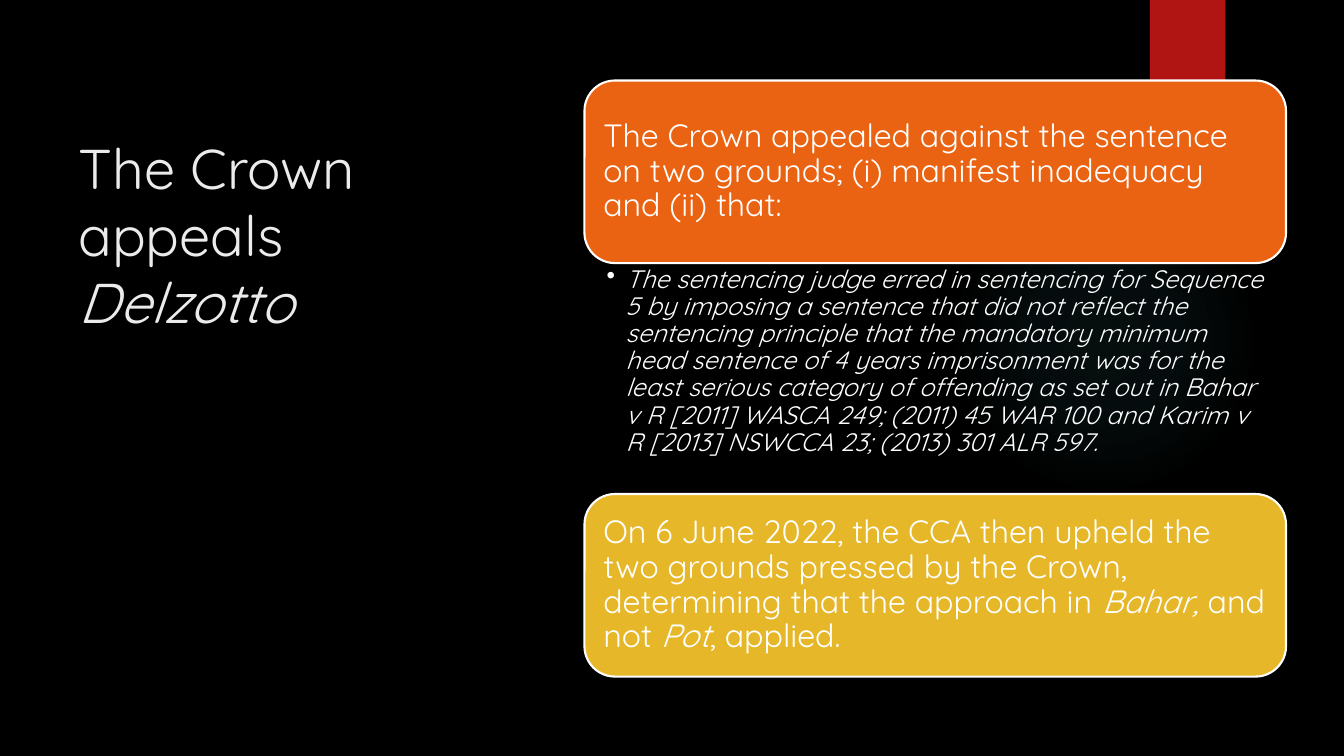
from lxml.etree import SubElement
from pptx import Presentation
from pptx.dml.color import RGBColor
from pptx.enum.shapes import MSO_SHAPE
from pptx.enum.text import MSO_ANCHOR, PP_ALIGN
from pptx.oxml import parse_xml
from pptx.oxml.ns import nsdecls, qn
from pptx.util import Cm, Pt

BLACK = RGBColor(0x00, 0x00, 0x00)
WHITE = RGBColor(0xFF, 0xFF, 0xFF)
PALE_GREY = RGBColor(0xEB, 0xEB, 0xEB)
RED = RGBColor(0xB0, 0x15, 0x13)
ORANGE = RGBColor(0xEA, 0x63, 0x12)
GOLD = RGBColor(0xE6, 0xB7, 0x29)
TEAL = RGBColor(0x50, 0xB9, 0xC1)
FONT = "Quicksand"

TITLE = [("The Crown appeals ", False), ("Delzotto", True)]
GROUNDS = [("The Crown appealed against the sentence on two grounds; "
            "(i) manifest inadequacy and (ii) that:", False)]
ERROR = [("The sentencing judge erred in sentencing for Sequence 5 by imposing a "
          "sentence that did not reflect the sentencing principle that the mandatory "
          "minimum head sentence of 4 years imprisonment was for the least serious "
          "category of offending as set out in Bahar v R [2011] WASCA 249; (2011) 45 "
          "WAR 100 and Karim v R [2013] NSWCCA 23; (2013) 301 ALR 597.", True)]
OUTCOME = [("On 6 June 2022, the CCA then upheld the two grounds pressed by the Crown, "
            "determining that the approach in ", False), ("Bahar, ", True),
           ("and not ", False), ("Pot", True), (", applied.", False)]


def write_text(shape, runs, size, color=WHITE, anchor=MSO_ANCHOR.TOP,
               margins=(0.25, 0.25, 0.25, 0.25), line_spacing=0.9, bullet_indent=None):
    frame = shape.text_frame
    frame.word_wrap = True
    frame.vertical_anchor = anchor
    (frame.margin_left, frame.margin_top,
     frame.margin_right, frame.margin_bottom) = map(Cm, margins)
    paragraph = frame.paragraphs[0]
    if bullet_indent:
        properties = paragraph._p.get_or_add_pPr()
        properties.set("marL", str(Cm(bullet_indent)))
        properties.set("indent", str(-Cm(bullet_indent)))
        SubElement(properties, qn("a:buChar")).set("char", "•")
    paragraph.alignment = PP_ALIGN.LEFT
    paragraph.line_spacing = line_spacing
    for text, italic in runs:
        run = paragraph.add_run()
        run.text = text
        run.font.name = FONT
        run.font.size = Pt(size)
        run.font.italic = italic
        run.font.color.rgb = color


def add_plain_shape(slide, kind, left, top, width, height, fill=None):
    shape = slide.shapes.add_shape(kind, Cm(left), Cm(top), Cm(width), Cm(height))
    shape.shadow.inherit = False
    shape.line.fill.background()
    if fill is not None:
        shape.fill.solid()
        shape.fill.fore_color.rgb = fill
    return shape


def add_backdrop(slide):
    slide.background.fill.solid()
    slide.background.fill.fore_color.rgb = BLACK
    glow = add_plain_shape(slide, MSO_SHAPE.OVAL, 23.9, 4.65, 7.82, 7.82)
    stops = "".join(
        f'<a:gs pos="{position * 1000}"><a:srgbClr val="{TEAL}">'
        f'<a:alpha val="{alpha * 1000}"/></a:srgbClr></a:gs>'
        for position, alpha in ((0, 7), (36, 6), (69, 0)))
    gradient = parse_xml(
        f'<a:gradFill {nsdecls("a")}><a:gsLst>{stops}</a:gsLst><a:path path="circle">'
        '<a:fillToRect l="50000" t="50000" r="50000" b="50000"/></a:path></a:gradFill>')
    glow._element.spPr.find(qn("a:prstGeom")).addnext(gradient)
    add_plain_shape(slide, MSO_SHAPE.RECTANGLE, 28.98, 0, 1.9, 3.17, RED)


def add_title(slide, left, top, width, height):
    box = slide.shapes.add_textbox(Cm(left), Cm(top), Cm(width), Cm(height))
    write_text(box, TITLE, 40, color=PALE_GREY, margins=(0.25, 0.13, 0.25, 0.13),
               line_spacing=1.0)


def add_card(slide, runs, fill, left, top, width, height):
    card = add_plain_shape(slide, MSO_SHAPE.ROUNDED_RECTANGLE,
                           left, top, width, height, fill)
    card.line.color.rgb = WHITE
    card.line.width = Pt(1.5)
    write_text(card, runs, 23, anchor=MSO_ANCHOR.MIDDLE)


def add_appeal_list(slide, left, top, width, height):
    card_height = 4.6
    detail_height = height - 2 * card_height
    detail_top = top + card_height
    add_card(slide, GROUNDS, ORANGE, left, top, width, card_height)
    detail = slide.shapes.add_textbox(Cm(left), Cm(detail_top), Cm(width),
                                      Cm(detail_height))
    write_text(detail, ERROR, 18, margins=(0.56, 0.08, 0.46, 0.08), bullet_indent=0.48)
    add_card(slide, OUTCOME, GOLD, left, detail_top + detail_height, width, card_height)


def main():
    presentation = Presentation()
    presentation.slide_width = Cm(33.87)
    presentation.slide_height = Cm(19.05)
    slide = presentation.slides.add_slide(presentation.slide_layouts[6])
    add_backdrop(slide)
    add_title(slide, 1.73, 3.23, 10, 12.57)
    add_appeal_list(slide, 14.73, 2.03, 17.68, 15.02)
    presentation.save("out.pptx")


if __name__ == "__main__":
    main()
